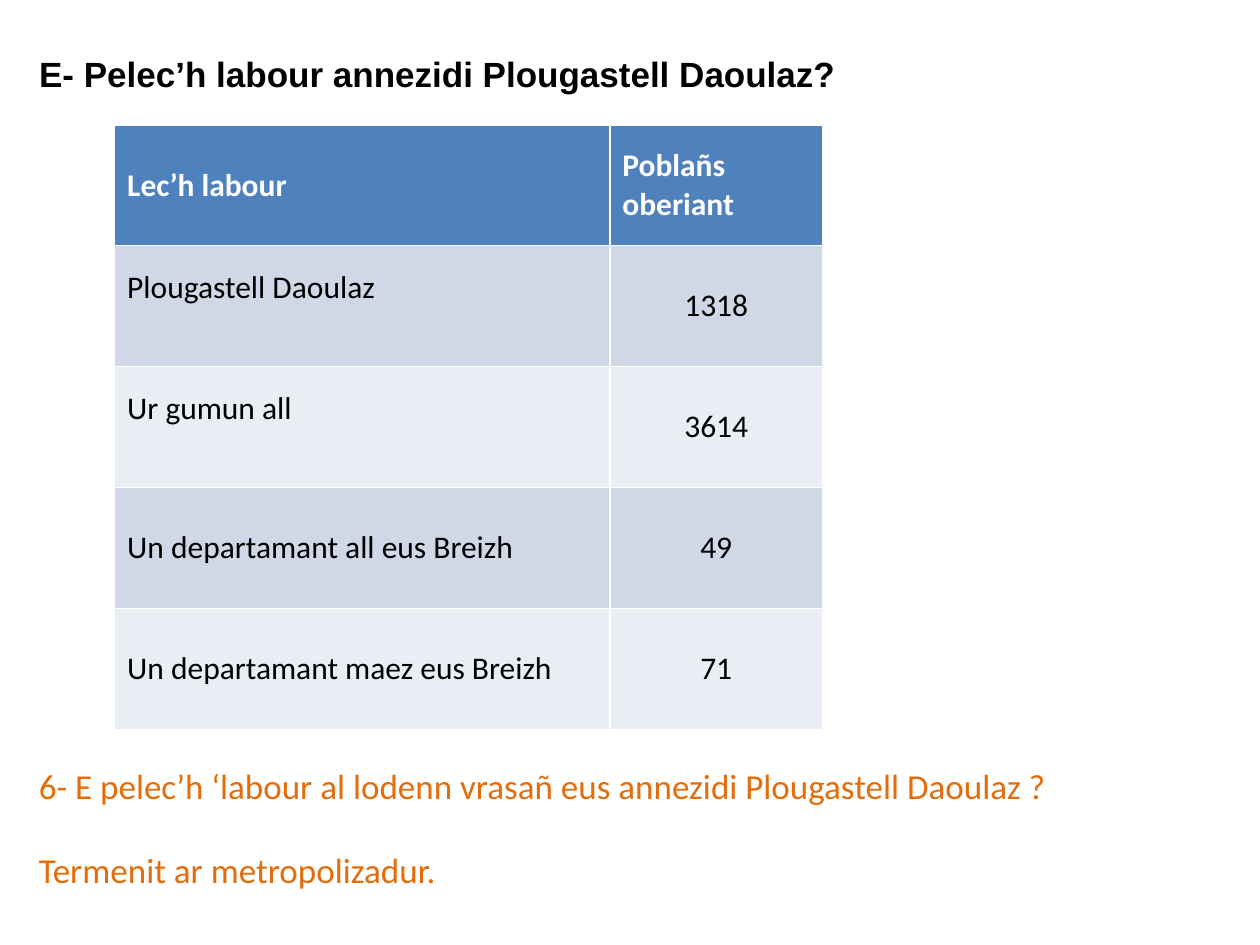
import pptx
import pptx.dml.color
import pptx.enum.text
import pptx.util
from pptx.util import Inches

ALIGN = pptx.enum.text.PP_ALIGN
MIDDLE = pptx.enum.text.MSO_ANCHOR.MIDDLE
HEADERS = ("Lec’h labour", "Poblañs oberiant")
WORKPLACES = (
    ("Plougastell Daoulaz", "1318"),
    ("Ur gumun all", "3614"),
    ("Un departamant all eus Breizh", "49"),
    ("Un departamant maez eus Breizh", "71"),
)
RAISED_LABELS = ("Plougastell Daoulaz", "Ur gumun all")
QUESTIONS = (
    "6- E pelec’h ‘labour al lodenn vrasañ eus annezidi Plougastell Daoulaz ?",
    "Termenit ar metropolizadur.",
)


def rgb(value):
    return pptx.dml.color.RGBColor.from_string(value)


def write(paragraph, text, size, color, font="Calibri", bold=False, align=ALIGN.LEFT):
    paragraph.text = text
    paragraph.alignment = align
    paragraph.font.name = font
    paragraph.font.size = pptx.util.Pt(size)
    paragraph.font.bold = bold
    paragraph.font.color.rgb = rgb(color)


def add_title(slide, text):
    title = slide.shapes.title
    title.left, title.top = Inches(0.21), Inches(0.36)
    title.width, title.height = Inches(6.65), Inches(0.44)
    frame = title.text_frame
    frame.word_wrap = False
    frame.vertical_anchor = MIDDLE
    write(frame.paragraphs[0], text, 20, "000000", "Arial", True)


def fill_cell(cell, text, fill, color, bold=False, align=ALIGN.LEFT):
    cell.fill.solid()
    cell.fill.fore_color.rgb = rgb(fill)
    cell.vertical_anchor = MIDDLE
    write(cell.text_frame.paragraphs[0], text, 18, color, bold=bold, align=align)


def add_workplace_table(slide):
    row_count = len(WORKPLACES) + 1
    table = slide.shapes.add_table(
        row_count, 2, Inches(0.91), Inches(0.99), Inches(5.62), Inches(0.96 * row_count)
    ).table
    table.columns[0].width = Inches(3.93)
    table.columns[1].width = Inches(1.69)
    for column, header in enumerate(HEADERS):
        fill_cell(table.cell(0, column), header, "4F81BD", "FFFFFF", bold=True)
    for row, (place, workers) in enumerate(WORKPLACES, start=1):
        band = "D0D8E8" if row % 2 else "E9EDF4"
        place_cell = table.cell(row, 0)
        fill_cell(place_cell, place, band, "000000")
        if place in RAISED_LABELS:
            place_cell.margin_bottom = Inches(0.35)
        fill_cell(table.cell(row, 1), workers, band, "000000", align=ALIGN.CENTER)


def add_questions(slide):
    frame = slide.shapes.add_textbox(
        Inches(0.21), Inches(6.02), Inches(8.49), Inches(1.45)
    ).text_frame
    frame.word_wrap = True
    for index, question in enumerate(QUESTIONS):
        paragraph = frame.add_paragraph() if index else frame.paragraphs[0]
        write(paragraph, question, 20, "E46C0A")
        if index:
            paragraph.space_before = pptx.util.Pt(24)


def main():
    presentation = pptx.Presentation()
    presentation.slide_width, presentation.slide_height = Inches(10), Inches(7.5)
    slide = presentation.slides.add_slide(presentation.slide_layouts[5])
    add_title(slide, "E- Pelec’h labour annezidi Plougastell Daoulaz?")
    add_workplace_table(slide)
    add_questions(slide)
    presentation.save("out.pptx")


if __name__ == "__main__":
    main()
